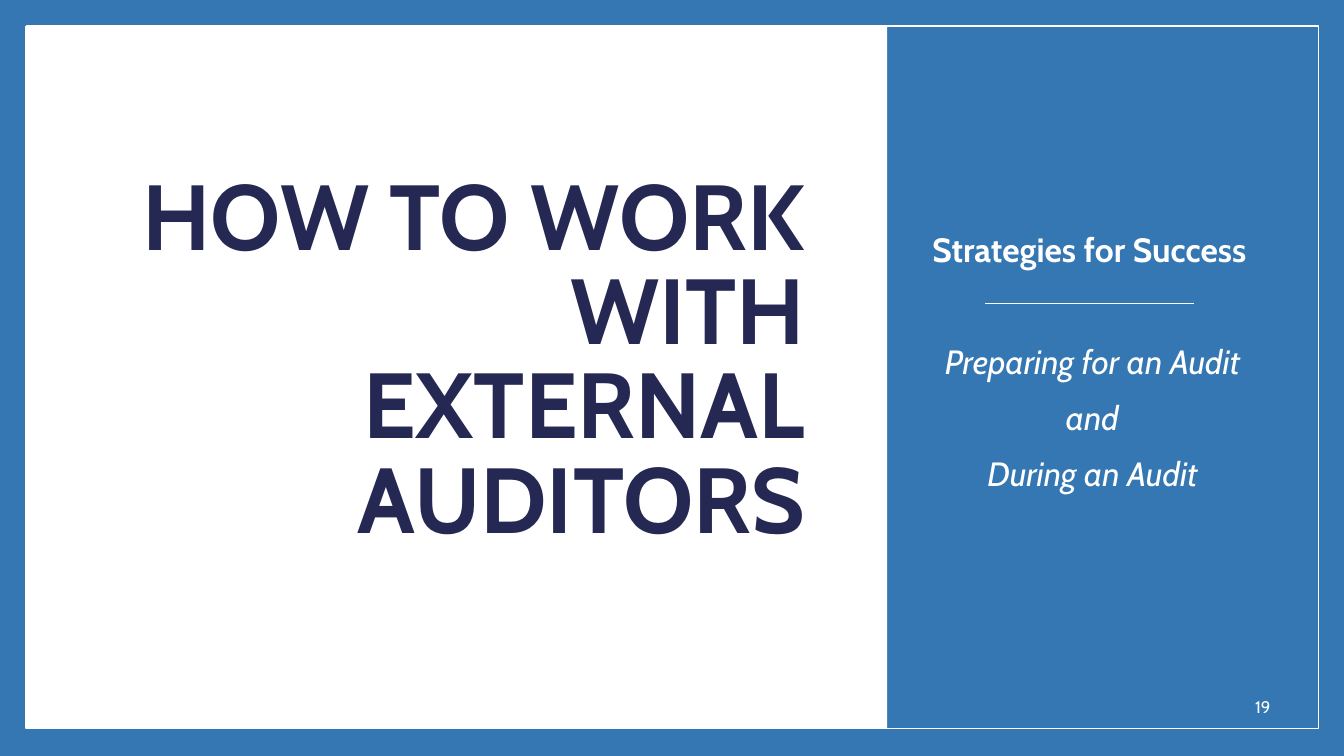
from lxml import etree
from pptx import Presentation
from pptx.dml.color import RGBColor
from pptx.enum.shapes import MSO_CONNECTOR, MSO_SHAPE
from pptx.enum.text import MSO_ANCHOR, PP_ALIGN
from pptx.oxml.ns import qn
from pptx.util import Inches, Pt

RECTANGLE = MSO_SHAPE.RECTANGLE
STRAIGHT = MSO_CONNECTOR.STRAIGHT
MIDDLE = MSO_ANCHOR.MIDDLE
LEFT, CENTER, RIGHT = PP_ALIGN.LEFT, PP_ALIGN.CENTER, PP_ALIGN.RIGHT

FONT = "Cabin"
COLORS = {"blue": "3477B2", "navy": "242852", "white": "FFFFFF"}


def color(name):
    """Return the named colour."""
    return RGBColor.from_string(COLORS[name])


def add_panel(slide, left, top, width, height, fill, line=None):
    """Draw a filled rectangle with an optional thin outline."""
    panel = slide.shapes.add_shape(
        RECTANGLE, Inches(left), Inches(top), Inches(width), Inches(height))
    panel.shadow.inherit = False
    panel.fill.solid()
    panel.fill.fore_color.rgb = color(fill)
    if line:
        panel.line.color.rgb = color(line)
        panel.line.width = Pt(1)
    else:
        panel.line.fill.background()


def add_text_frame(slide, left, top, width, height):
    """Add a wrapping, vertically centred text box and return its frame."""
    box = slide.shapes.add_textbox(
        Inches(left), Inches(top), Inches(width), Inches(height))
    frame = box.text_frame
    frame.word_wrap = True
    frame.vertical_anchor = MIDDLE
    return frame


def write(paragraph, text, size, tint, align, spacing=1.0, before=0,
          bold=False, italic=False):
    """Fill a paragraph with text and format it."""
    paragraph.text = text
    paragraph.alignment = align
    paragraph.line_spacing = spacing
    paragraph.space_before = Pt(before)
    for run in paragraph.runs:
        run.font.name = FONT
        run.font.size = Pt(size)
        run.font.bold = bold
        run.font.italic = italic
        run.font.color.rgb = color(tint)


def add_divider(slide, left, right, y):
    """Draw a thin white horizontal line."""
    divider = slide.shapes.add_connector(
        STRAIGHT, Inches(left), Inches(y), Inches(right), Inches(y))
    divider.line.color.rgb = color("white")
    divider.line.width = Pt(0.79)
    etree.SubElement(divider._element.spPr, qn("a:effectLst"))


def add_strategies(slide):
    """Write the side heading and the audit stages below it."""
    frame = add_text_frame(slide, 9.15, 0.75, 3.37, 5.71)
    write(frame.paragraphs[0], "Strategies for Success", 24, "white", LEFT,
          spacing=0.9, before=14, bold=True)
    stages = [("Preparing for an Audit", 54), ("and", 14),
              ("During an Audit", 14)]
    for stage, before in stages:
        write(frame.add_paragraph(), stage, 24, "white", CENTER,
              spacing=0.9, before=before, italic=True)


def main():
    """Build the section slide and save it."""
    deck = Presentation()
    deck.slide_width, deck.slide_height = Inches(13.33), Inches(7.5)
    slide = deck.slides.add_slide(deck.slide_layouts[6])

    add_panel(slide, 0, 0, 13.33, 7.5, "blue")
    add_panel(slide, 0.26, 0.26, 12.82, 6.97, "blue", line="white")
    add_panel(slide, 0.25, 0.26, 8.55, 6.97, "white")

    title = add_text_frame(slide, 1.25, 0.75, 6.83, 5.71)
    write(title.paragraphs[0], "HOW TO WORK WITH EXTERNAL AUDITORS", 66,
          "navy", RIGHT, spacing=0.85, bold=True)
    add_strategies(slide)
    page_number = add_text_frame(slide, 12, 6.81, 0.7, 0.4)
    write(page_number.paragraphs[0], "19", 12, "white", RIGHT)
    add_divider(slide, 9.77, 11.84, 3.01)

    deck.save("out.pptx")


if __name__ == "__main__":
    main()
